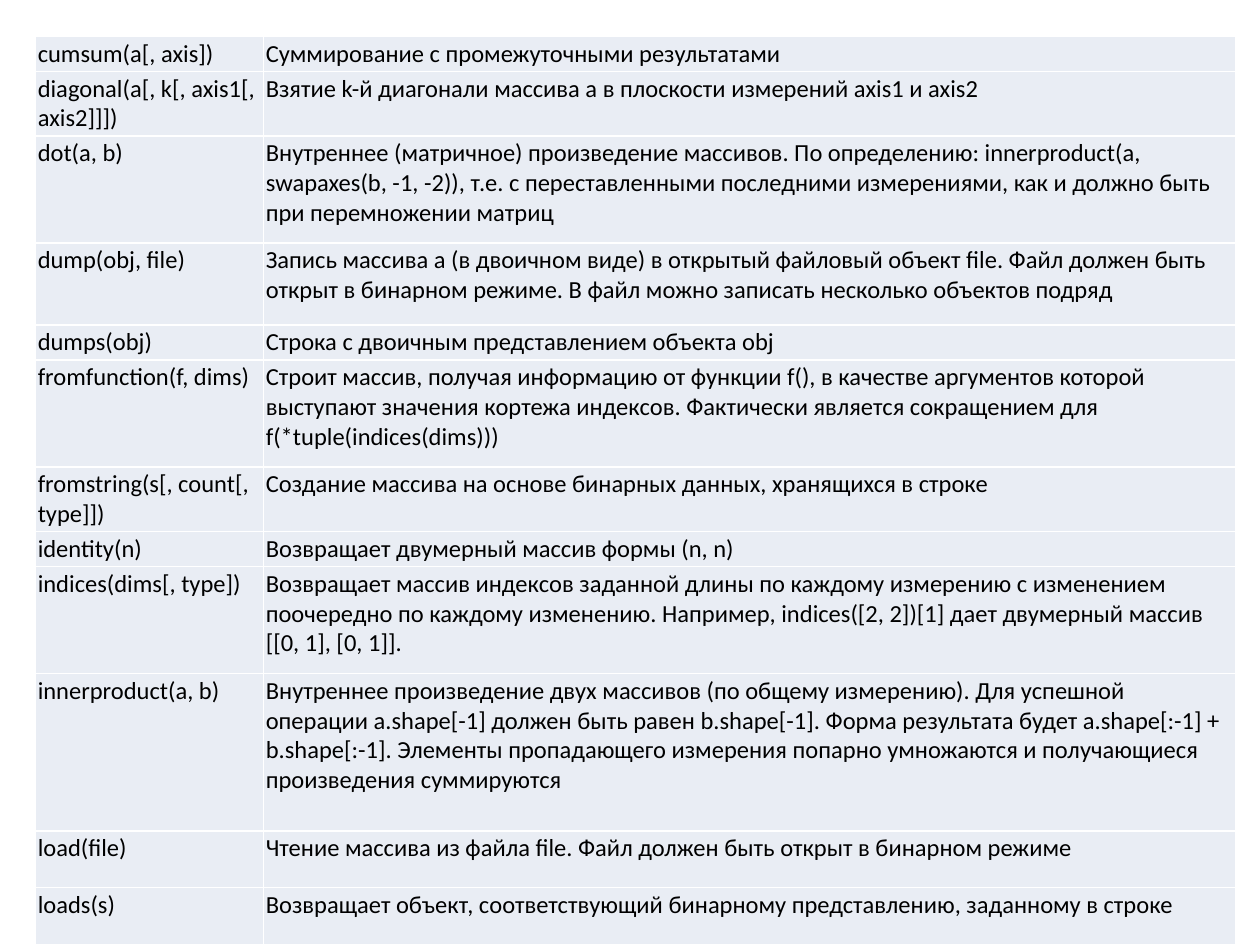
import pptx
import pptx.dml.color
import pptx.oxml.ns
import pptx.util
from lxml import etree

BLACK = pptx.dml.color.RGBColor(0x00, 0x00, 0x00)
WHITE = pptx.dml.color.RGBColor(0xFF, 0xFF, 0xFF)
PALE = pptx.dml.color.RGBColor(0xE9, 0xED, 0xF4)
WIDTH, HEIGHT = 10, 7.5
LEFT, TOP = 0.28, 0.29
COLS = (1.81, 7.72)
INSET = 0.02

ROWS = [
    (0.25, "cumsum(a[, axis])", "Суммирование с промежуточными результатами"),
    (0.45, "diagonal(a[, k[, axis1[, axis2]]])",
     "Взятие k-й диагонали массива a в плоскости измерений axis1 и axis2"),
    (0.85, "dot(a, b)",
     "Внутреннее (матричное) произведение массивов. По определению: "
     "innerproduct(a, swapaxes(b, -1, -2)), т.е. с переставленными последними "
     "измерениями, как и должно быть при перемножении матриц"),
    (0.65, "dump(obj, file)",
     "Запись массива a (в двоичном виде) в открытый файловый объект file. "
     "Файл должен быть открыт в бинарном режиме. "
     "В файл можно записать несколько объектов подряд"),
    (0.25, "dumps(obj)", "Строка с двоичным представлением объекта obj"),
    (0.85, "fromfunction(f, dims)",
     "Строит массив, получая информацию от функции f(), в качестве аргументов "
     "которой выступают значения кортежа индексов. Фактически является "
     "сокращением для f(*tuple(indices(dims)))"),
    (0.45, "fromstring(s[, count[, type]])",
     "Создание массива на основе бинарных данных, хранящихся в строке"),
    (0.25, "identity(n)", "Возвращает двумерный массив формы (n, n)"),
    (0.85, "indices(dims[, type])",
     "Возвращает массив индексов заданной длины по каждому измерению с "
     "изменением поочередно по каждому изменению. Например, "
     "indices([2, 2])[1] дает двумерный массив [[0, 1], [0, 1]]."),
    (1.25, "innerproduct(a, b)",
     "Внутреннее произведение двух массивов (по общему измерению). Для успешной "
     "операции a.shape[-1] должен быть равен b.shape[-1]. Форма результата будет "
     "a.shape[:-1] + b.shape[:-1]. Элементы пропадающего измерения попарно "
     "умножаются и получающиеся произведения суммируются"),
    (0.45, "load(file)",
     "Чтение массива из файла file. Файл должен быть открыт в бинарном режиме"),
    (0.45, "loads(s)",
     "Возвращает объект, соответствующий бинарному представлению, заданному в строке"),
]


def write(frame, text, size=14, font="Calibri", color=BLACK):
    """Put formatted text in a text frame."""
    run = frame.paragraphs[0].add_run()
    run.text = text
    run.font.size = pptx.util.Pt(size)
    run.font.name = font
    run.font.color.rgb = color


def rule(cell, color=WHITE, width=1):
    """Draw a solid line on each side of a cell."""
    qn = pptx.oxml.ns.qn
    props = cell._tc.get_or_add_tcPr()
    for side in "LRTB":
        line = etree.SubElement(props, qn(f"a:ln{side}"), w=str(pptx.util.Pt(width)))
        fill = etree.SubElement(line, qn("a:solidFill"))
        etree.SubElement(fill, qn("a:srgbClr"), val=str(color))


def style(cell, text):
    """Give a cell its borders, fill, margins and text."""
    rule(cell)
    cell.fill.solid()
    cell.fill.fore_color.rgb = PALE
    cell.margin_left = cell.margin_right = pptx.util.Inches(INSET)
    cell.margin_top = cell.margin_bottom = pptx.util.Inches(INSET)
    write(cell.text_frame, text)


def add_grid(slide):
    """Add the table of array functions."""
    inch = pptx.util.Inches
    high = sum(row[0] for row in ROWS)
    table = slide.shapes.add_table(
        len(ROWS), len(COLS), inch(LEFT), inch(TOP), inch(sum(COLS)), inch(high)
    ).table
    table.first_row = table.horz_banding = False
    for col, wide in zip(table.columns, COLS):
        col.width = inch(wide)
    for row, (tall, *texts) in zip(table.rows, ROWS):
        row.height = inch(tall)
        for cell, text in zip(row.cells, texts):
            style(cell, text)


def main():
    """Build and save the slide."""
    deck = pptx.Presentation()
    deck.slide_width = pptx.util.Inches(WIDTH)
    deck.slide_height = pptx.util.Inches(HEIGHT)
    add_grid(deck.slides.add_slide(deck.slide_layouts[6]))
    deck.save("out.pptx")


if __name__ == "__main__":
    main()
